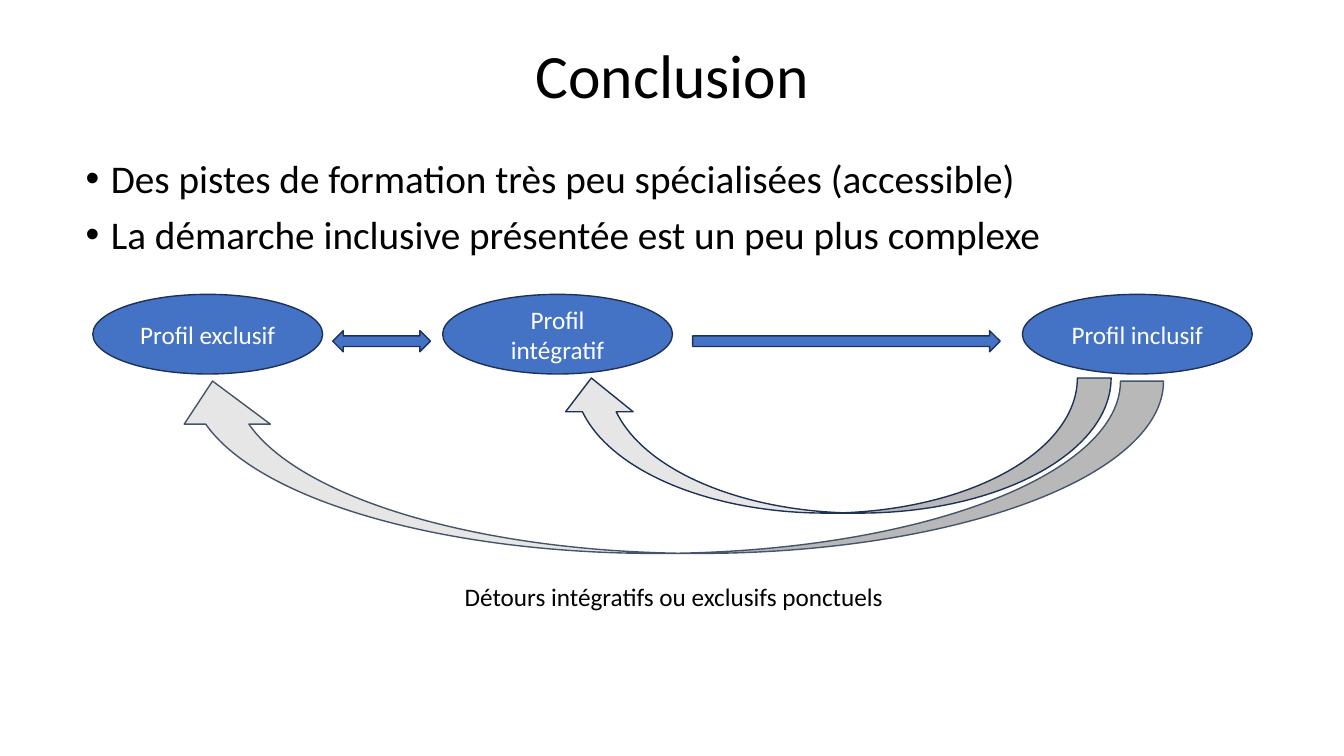
from dataclasses import dataclass

from lxml.etree import SubElement
from pptx import Presentation
from pptx.dml.color import RGBColor
from pptx.enum.shapes import MSO_SHAPE
from pptx.enum.text import MSO_ANCHOR, MSO_AUTO_SIZE, PP_ALIGN
from pptx.oxml.ns import qn
from pptx.util import Inches, Pt


@dataclass(frozen=True)
class Theme:
    font: str = "Calibri"
    title_size: int = 44
    body_size: int = 28
    label_size: int = 18
    black: str = "000000"
    white: str = "FFFFFF"
    blue: str = "4472C4"
    navy: str = "1E3256"
    grey: str = "E7E6E6"
    slate: str = "44546A"


theme = Theme()


def format_text(para, size, color, alignment):
    para.alignment = alignment
    for span in para.runs:
        span.font.name = theme.font
        span.font.size = Pt(size)
        span.font.color.rgb = RGBColor.from_string(color)


def add_figure(kind, left, top, width, height, fill, line):
    figure = page.shapes.add_shape(kind, Inches(left), Inches(top), Inches(width), Inches(height))
    figure.shadow.inherit = False
    figure.fill.solid()
    figure.fill.fore_color.rgb = RGBColor.from_string(fill)
    figure.line.color.rgb = RGBColor.from_string(line)
    figure.line.width = Pt(1)
    return figure


deck = Presentation()
deck.slide_width = Inches(13.33)
deck.slide_height = Inches(7.5)
page = deck.slides.add_slide(deck.slide_layouts[1])

title = page.shapes.title
title.left, title.top = Inches(0.92), Inches(0.4)
title.width, title.height = Inches(11.5), Inches(1.45)
title.text_frame.text = "Conclusion"
title.text_frame.vertical_anchor = MSO_ANCHOR.TOP
title.text_frame.auto_size = MSO_AUTO_SIZE.NONE
title_para = title.text_frame.paragraphs[0]
title_para.line_spacing = 0.9
format_text(title_para, theme.title_size, theme.black, PP_ALIGN.CENTER)

body = page.placeholders[1]
body.left, body.top = Inches(0.75), Inches(1.53)
body.width, body.height = Inches(11.67), Inches(5.22)
body.text_frame.auto_size = MSO_AUTO_SIZE.NONE
body.text_frame.text = (
    "Des pistes de formation très peu spécialisées (accessible)\n"
    "La démarche inclusive présentée est un peu plus complexe"
)
for index, para in enumerate(body.text_frame.paragraphs):
    properties = para._p.get_or_add_pPr()
    properties.set("marL", str(Inches(0.25)))
    properties.set("indent", str(-Inches(0.25)))
    SubElement(properties, qn("a:buFont"), typeface="Arial")
    SubElement(properties, qn("a:buChar"), char="•")
    para.line_spacing = 0.9
    para.space_before = Pt(10 if index else 0)
    format_text(para, theme.body_size, theme.black, PP_ALIGN.LEFT)

for label, left in (("Profil exclusif", 0.92), ("Profil intégratif", 4.39), ("Profil inclusif", 10.14)):
    profile = add_figure(MSO_SHAPE.OVAL, left, 2.92, 2.28, 0.79, theme.blue, theme.navy)
    profile.text_frame.text = label
    profile.text_frame.word_wrap = True
    profile.text_frame.vertical_anchor = MSO_ANCHOR.MIDDLE
    format_text(profile.text_frame.paragraphs[0], theme.label_size, theme.white, PP_ALIGN.CENTER)

for kind, left, width in ((MSO_SHAPE.LEFT_RIGHT_ARROW, 3.3, 0.97), (MSO_SHAPE.RIGHT_ARROW, 6.87, 3.05)):
    add_figure(kind, left, 3.28, width, 0.21, theme.blue, theme.navy)

for left, top, width, height, line in (
    (5.53, 3.75, 5.49, 1.34, theme.navy),
    (1.68, 3.78, 9.86, 1.71, theme.slate),
):
    detour = add_figure(MSO_SHAPE.CURVED_DOWN_ARROW, left, top, width, height, theme.grey, line)
    detour.rotation = 180

caption = page.shapes.add_textbox(Inches(4.51), Inches(5.72), Inches(4.72), Inches(0.4))
caption.text_frame.text = "Détours intégratifs ou exclusifs ponctuels"
caption.text_frame.word_wrap = True
caption.text_frame.auto_size = MSO_AUTO_SIZE.SHAPE_TO_FIT_TEXT
format_text(caption.text_frame.paragraphs[0], theme.label_size, theme.black, PP_ALIGN.LEFT)

deck.save("out.pptx")
